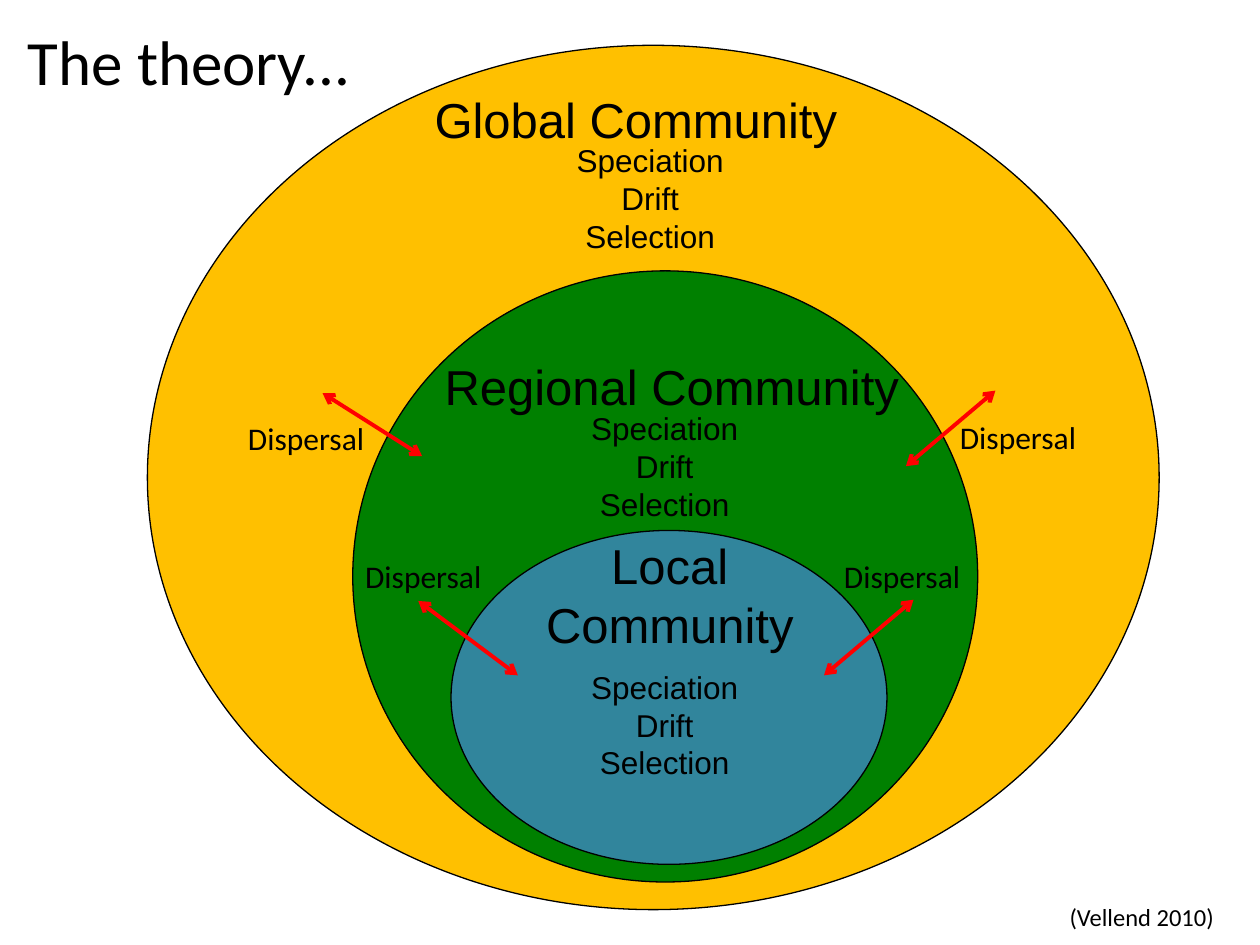
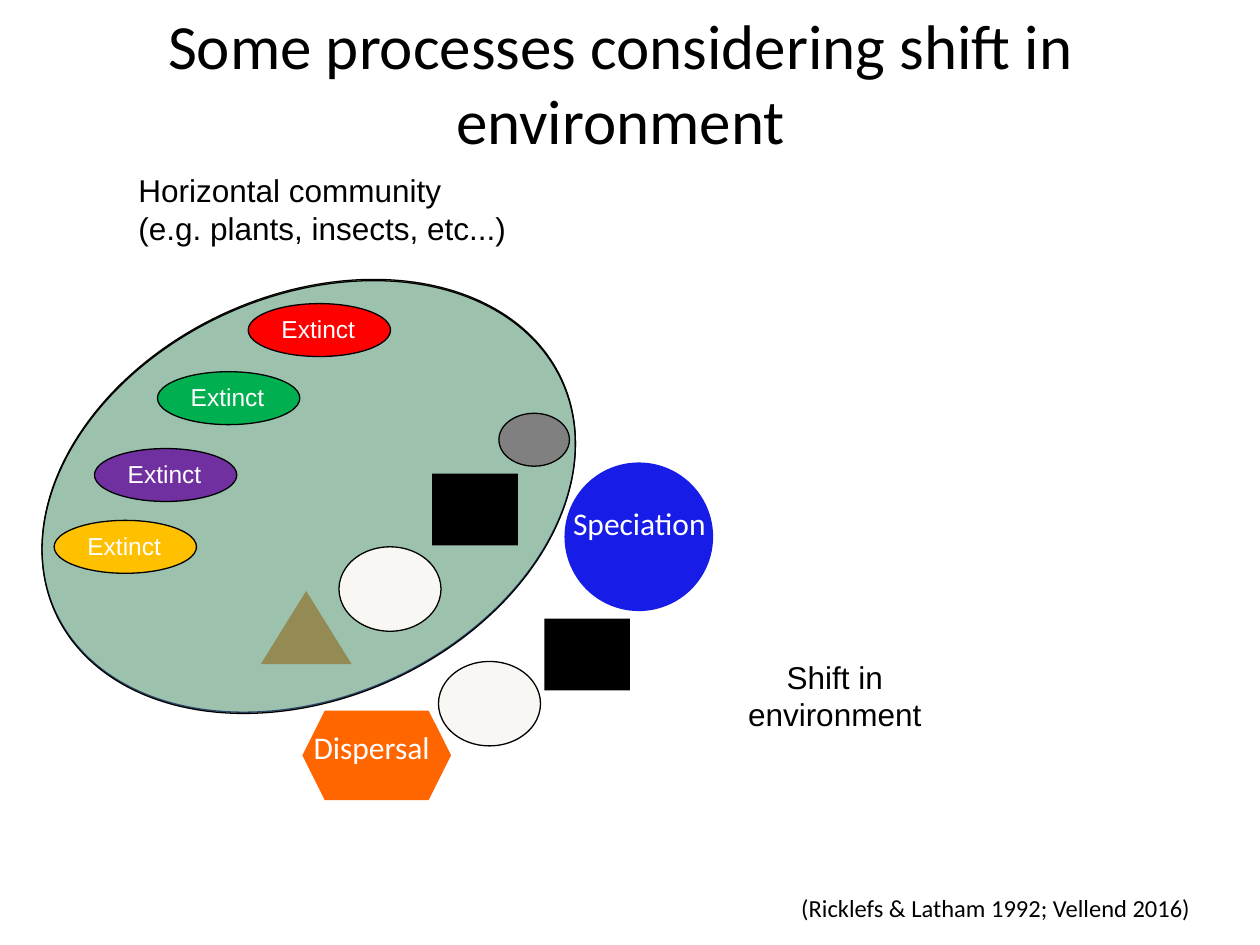
"""Build two slides on community theory and processes under environmental shift."""
from lxml import etree
from pptx import Presentation
from pptx.dml.color import RGBColor
from pptx.enum import shapes, text
from pptx.oxml import ns
from pptx.util import Inches, Pt

COLOURS = {
    "black": "000000", "white": "FFFFFF", "red": "FF0000", "gold": "FFC000",
    "forest": "008000", "teal": "31859C", "lime": "CBF10F", "sky": "558ED5",
    "grey": "808080", "purple": "7030A0", "green": "00B050", "cream": "F8F7F3",
    "tan": "948A54", "blue": "171CE7", "orange": "FF6600",
}
ELLIPSE = shapes.MSO_SHAPE.OVAL
RECTANGLE = shapes.MSO_SHAPE.RECTANGLE
TRIANGLE = shapes.MSO_SHAPE.ISOSCELES_TRIANGLE
HEXAGON = shapes.MSO_SHAPE.HEXAGON
LEFT, CENTER = text.PP_ALIGN.LEFT, text.PP_ALIGN.CENTER

THEORY_TITLE = "The theory..."
THEORY_CITATION = "(Vellend 2010)"
PROCESSES = ["Speciation", "Drift", "Selection"]
COMMUNITIES = [
    {"fill": "gold", "ellipse": (1.17, 0.36, 8.03, 6.86), "name": "Global Community",
     "name_box": (3.35, 0.66, 3.55, 0.57), "process_box": (4.15, 1.07, 2.02, 1.01)},
    {"fill": "forest", "ellipse": (2.8, 2.15, 4.96, 4.85), "name": "Regional Community",
     "name_box": (3.43, 2.78, 3.93, 0.57), "process_box": (3.93, 3.2, 2.69, 1.01)},
    {"fill": "teal", "ellipse": (3.58, 4.21, 3.46, 2.65), "name": "Local Community",
     "name_box": (3.74, 4.2, 3.15, 1.04), "process_box": (3.93, 5.25, 2.69, 1.01)},
]
DISPERSALS = [
    {"start": (2.56, 3.12), "end": (3.35, 3.62), "label": (1.87, 3.28)},
    {"start": (3.32, 4.77), "end": (4.11, 5.36), "label": (2.8, 4.37)},
    {"start": (7.9, 3.1), "end": (7.19, 3.7), "label": (7.52, 3.27)},
    {"start": (7.25, 4.76), "end": (6.54, 5.36), "label": (6.6, 4.37)},
]

SHIFT_TITLE = "Some processes considering shift in environment"
SHIFT_CITATION = "(Ricklefs & Latham 1992; Vellend 2016)"
SHIFT_LABEL = "Shift in environment"
HORIZONTAL_COMMUNITY = ["Horizontal community", "(e.g. plants, insects, etc...)"]
ENVIRONMENTS = [("lime", 2.34), ("sky", 2.35)]
EXTINCT_SPECIES = [("gold", 0.43, 4.13), ("purple", 0.75, 3.56),
                   ("green", 1.25, 2.95), ("red", 1.97, 2.41)]
SURVIVING_SPECIES = [
    (ELLIPSE, "grey", (3.96, 3.28, 0.56, 0.42), True),
    (ELLIPSE, "cream", (2.69, 4.34, 0.81, 0.67), True),
    (RECTANGLE, "black", (3.43, 3.76, 0.68, 0.57), False),
    (TRIANGLE, "tan", (2.07, 4.69, 0.72, 0.58), False),
    (RECTANGLE, "black", (4.32, 4.91, 0.68, 0.57), False),
    (ELLIPSE, "cream", (3.48, 5.25, 0.81, 0.67), True),
]
NEW_SPECIES = [
    ("Speciation", ELLIPSE, "blue", (4.48, 3.67, 1.18, 1.18), (4.45, 3.95, 1.26, 0.4)),
    ("Dispersal", HEXAGON, "orange", (2.4, 5.64, 1.18, 0.71), (2.39, 5.73, 1.14, 0.4)),
]


def rgb(name):
    return RGBColor.from_string(COLOURS[name])


def inches(box):
    return [Inches(length) for length in box]


def write(shape, lines, size=18, font="Calibri", colour="black", align=LEFT,
          wrap=False, anchor=text.MSO_ANCHOR.TOP, spacing=None):
    frame = shape.text_frame
    frame.auto_size = text.MSO_AUTO_SIZE.NONE
    frame.word_wrap = wrap
    frame.vertical_anchor = anchor
    lines = [lines] if isinstance(lines, str) else lines
    for index, line in enumerate(lines):
        paragraph = frame.add_paragraph() if index else frame.paragraphs[0]
        paragraph.alignment = align
        if spacing:
            paragraph.line_spacing = spacing
        run = paragraph.add_run()
        run.text = line
        run.font.size = Pt(size)
        run.font.name = font
        run.font.color.rgb = rgb(colour)


def add_text(container, box, lines, **style):
    write(container.shapes.add_textbox(*inches(box)), lines, **style)


def add_figure(container, kind, box, fill, outlined=True, alpha=None):
    shape = container.shapes.add_shape(kind, *inches(box))
    shape.shadow.inherit = False
    shape.fill.solid()
    shape.fill.fore_color.rgb = rgb(fill)
    if alpha:
        colour = shape.fill._xPr.find(".//" + ns.qn("a:srgbClr"))
        etree.SubElement(colour, ns.qn("a:alpha"), val=str(alpha * 1000))
    if outlined:
        shape.line.color.rgb = rgb("black")
        shape.line.width = Pt(0.75)
    else:
        shape.line.fill.background()
    return shape


def add_double_arrow(slide, start, end):
    arrow = slide.shapes.add_connector(shapes.MSO_CONNECTOR.STRAIGHT, *inches(start + end))
    arrow.line.color.rgb = rgb("red")
    arrow.line.width = Pt(2.25)
    line = arrow.line._get_or_add_ln()
    for tip in ("a:headEnd", "a:tailEnd"):
        etree.SubElement(line, ns.qn(tip), type="arrow")
    etree.SubElement(arrow._element.spPr, ns.qn("a:effectLst"))


def add_slide(presentation, title, title_box, citation, citation_box, **title_style):
    slide = presentation.slides.add_slide(presentation.slide_layouts[5])
    heading = slide.shapes.title
    heading.left, heading.top, heading.width, heading.height = inches(title_box)
    write(heading, title, size=36, wrap=True, **title_style)
    add_text(slide, citation_box, citation, size=14)
    return slide


def build_theory(presentation):
    slide = add_slide(presentation, THEORY_TITLE, (0.12, 0.13, 3.15, 0.71),
                      THEORY_CITATION, (8.39, 7.11, 1.57, 0.34))
    for community in COMMUNITIES:
        add_figure(slide, ELLIPSE, community["ellipse"], community["fill"])
    for community in COMMUNITIES:
        align = CENTER if community["name"].startswith("Local") else LEFT
        add_text(slide, community["name_box"], community["name"], size=28,
                 font="Arial", align=align, wrap=True)
        add_text(slide, community["process_box"], PROCESSES, font="Arial",
                 align=CENTER, wrap=True)
    for dispersal in DISPERSALS:
        add_double_arrow(slide, dispersal["start"], dispersal["end"])
        add_text(slide, dispersal["label"] + (1.24, 0.4), "Dispersal")


def build_shift(presentation):
    slide = add_slide(presentation, SHIFT_TITLE, (0.2, 0, 9.45, 1.31),
                      SHIFT_CITATION, (6.26, 7.04, 3.62, 0.34), align=CENTER)
    add_text(slide, (5.81, 5.17, 1.63, 0.71), SHIFT_LABEL, font="Arial",
             align=CENTER, wrap=True)
    add_text(slide, (1, 1.31, 3.91, 0.71), HORIZONTAL_COMMUNITY, font="Arial", wrap=True)
    for fill, top in ENVIRONMENTS:
        environment = add_figure(slide, ELLIPSE, (0.24, top, 4.42, 3.19), fill, alpha=50)
        environment.rotation = 335.4
    for fill, left, top in EXTINCT_SPECIES:
        species = add_figure(slide, ELLIPSE, (left, top, 1.13, 0.42), fill)
        write(species, "Extinct", size=14, font="Arial", colour="white",
              anchor=text.MSO_ANCHOR.MIDDLE, spacing=0.93)
    for kind, fill, box, outlined in SURVIVING_SPECIES:
        add_figure(slide, kind, box, fill, outlined)
    for label, kind, fill, box, label_box in NEW_SPECIES:
        group = slide.shapes.add_group_shape()
        add_figure(group, kind, box, fill, outlined=False)
        add_text(group, label_box, label, colour="white")


def main():
    presentation = Presentation()
    presentation.slide_width, presentation.slide_height = inches((10, 7.5))
    build_theory(presentation)
    build_shift(presentation)
    presentation.save("out.pptx")


if __name__ == "__main__":
    main()
